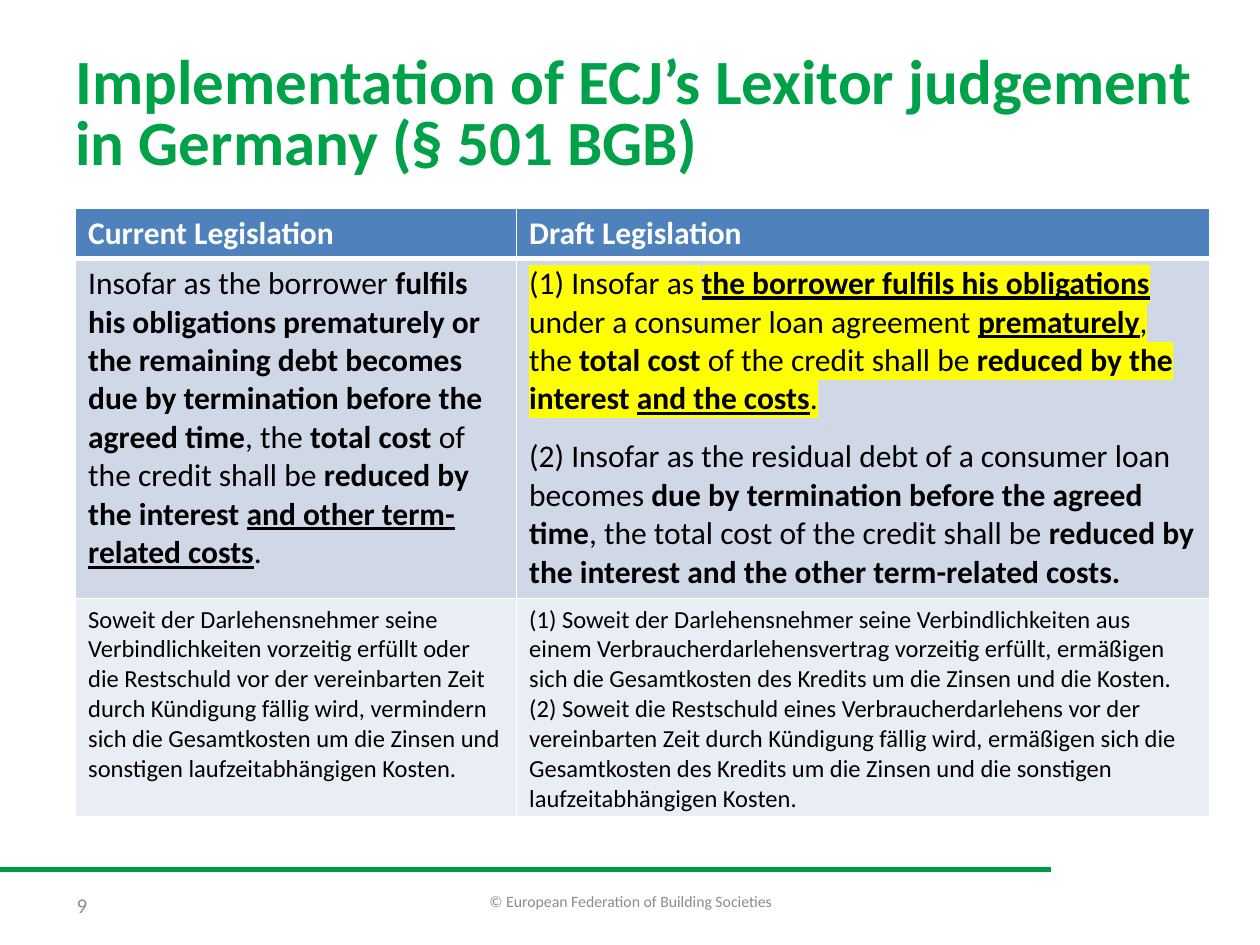
from dataclasses import dataclass
from typing import NamedTuple

from lxml import etree
from pptx import Presentation
from pptx import util as u
from pptx.dml.color import RGBColor
from pptx.enum import shapes, text
from pptx.oxml.ns import qn


@dataclass(frozen=True)
class Theme:
    font: str = "Calibri"
    title_color: str = "00A249"
    rule_color: str = "009A46"
    footer_color: str = "8C8C8C"
    ink: str = "000000"
    white: str = "FFFFFF"
    marker: str = "FFFF00"
    row_fills: tuple = ("4F81BD", "D0D8E8", "E9EDF4")
    title_size: float = 36
    law_size: float = 18
    german_size: float = 14
    number_size: float = 12
    copyright_size: float = 9


class Run(NamedTuple):
    words: str
    bold: bool = False
    underline: bool = False


class Para(NamedTuple):
    runs: tuple
    marked: bool = False
    gap: float = 0


class Style(NamedTuple):
    size: float
    color: str


class Box(NamedTuple):
    """Lengths as shares of the slide's width and height."""
    left: float
    top: float
    width: float
    height: float


THEME = Theme()
WIDTH, HEIGHT = u.Inches(10), u.Inches(7.5)

# Table grid: column shares of the width, row shares of the height
TABLE_LEFT, TABLE_TOP = 0.06, 0.22
COLUMNS = (0.35, 0.55)
ROWS = (0.05, 0.36, 0.23)

HEADINGS = [[Para((Run(name, True),))] for name in ("Current Legislation", "Draft Legislation")]

CURRENT_LAW = [Para((
    Run("Insofar as the borrower "),
    Run("fulfils his obligations prematurely or the remaining debt becomes "
        "due by termination before the agreed time", True),
    Run(", the "), Run("total cost ", True),
    Run("of the credit shall be "), Run("reduced by the interest ", True),
    Run("and other term-related costs", True, True), Run("."),
))]

DRAFT_LAW = [
    Para((
        Run("(1) Insofar as "),
        Run("the borrower fulfils his obligations ", True, True),
        Run("under a consumer loan agreement "),
        Run("prematurely", True, True), Run(", the "),
        Run("total cost ", True), Run("of the credit shall be "),
        Run("reduced by the interest ", True),
        Run("and the costs", True, True), Run("."),
    ), marked=True),
    Para((
        Run("(2) Insofar as the residual debt of a consumer loan becomes "),
        Run("due by termination before the agreed time", True),
        Run(", the total cost of the credit shall be"),
        Run(" reduced by the interest and the other term-related costs.", True),
    ), gap=11),
]

CURRENT_GERMAN = [Para((Run(
    "Soweit der Darlehensnehmer seine Verbindlichkeiten vorzeitig erfüllt oder die "
    "Restschuld vor der vereinbarten Zeit durch Kündigung fällig wird, vermindern sich "
    "die Gesamtkosten um die Zinsen und sonstigen laufzeitabhängigen Kosten."),))]

DRAFT_GERMAN = [
    Para((Run(
        "(1) Soweit der Darlehensnehmer seine Verbindlichkeiten aus einem "
        "Verbraucherdarlehensvertrag vorzeitig erfüllt, ermäßigen sich die "
        "Gesamtkosten des Kredits um die Zinsen und die Kosten."),)),
    Para((Run(
        "(2) Soweit die Restschuld eines Verbraucherdarlehens vor der vereinbarten Zeit "
        "durch Kündigung fällig wird, ermäßigen sich die Gesamtkosten des Kredits um die "
        "Zinsen und die sonstigen laufzeitabhängigen Kosten."),)),
]

CONTENT = (HEADINGS, (CURRENT_LAW, DRAFT_LAW), (CURRENT_GERMAN, DRAFT_GERMAN))
ROW_STYLES = (Style(THEME.law_size, THEME.white),
              Style(THEME.law_size, THEME.ink),
              Style(THEME.german_size, THEME.ink))


def across(share: float) -> int:
    return round(WIDTH * share)


def down(share: float) -> int:
    return round(HEIGHT * share)


def add_color(parent, tag: str, color: str):
    element = etree.SubElement(parent, qn(tag))
    etree.SubElement(element, qn("a:srgbClr"), val=color)
    return element


def write(frame, paras, style: Style, **layout) -> None:
    for index, para in enumerate(paras):
        line = frame.paragraphs[0] if index == 0 else frame.add_paragraph()
        if para.gap:
            line.space_before = u.Pt(para.gap)
        for name, value in layout.items():
            setattr(line, name, value)
        for part in para.runs:
            run = line.add_run()
            run.text = part.words
            run.font.color.rgb = RGBColor.from_string(style.color)
            if para.marked:
                add_color(run.font._element, "a:highlight", THEME.marker)
            formats = {"size": u.Pt(style.size), "bold": part.bold,
                       "underline": part.underline, "name": THEME.font}
            for name, value in formats.items():
                setattr(run.font, name, value)


def add_label(slide, box: Box, words: Run, style: Style, **layout) -> None:
    frame = slide.shapes.add_textbox(across(box.left), down(box.top),
                                     across(box.width), down(box.height)).text_frame
    frame.word_wrap = True
    frame.vertical_anchor = text.MSO_ANCHOR.MIDDLE
    write(frame, [Para((words,))], style, **layout)


def add_borders(cell, widths: dict) -> None:
    properties = cell._tc.get_or_add_tcPr()
    for index, (side, points) in enumerate(widths.items()):
        border = etree.Element(qn(f"a:ln{side}"), w=str(u.Pt(points)))
        add_color(border, "a:solidFill", THEME.white)
        properties.insert(index, border)


def add_law_table(slide) -> None:
    table = slide.shapes.add_table(
        len(ROWS), len(COLUMNS), across(TABLE_LEFT), down(TABLE_TOP),
        across(sum(COLUMNS)), down(sum(ROWS))).table
    for column, share in zip(table.columns, COLUMNS):
        column.width = across(share)
    for r, (row, share) in enumerate(zip(table.rows, ROWS)):
        row.height = down(share)
        for cell, paras in zip(row.cells, CONTENT[r]):
            cell.fill.solid()
            cell.fill.fore_color.rgb = RGBColor.from_string(THEME.row_fills[r])
            # The header is set off by a thicker line
            add_borders(cell, {"L": 1, "R": 1, "T": 3 if r == 1 else 1, "B": 3 if r == 0 else 1})
            write(cell.text_frame, paras, ROW_STYLES[r])


def add_rule(slide) -> None:
    rule = slide.shapes.add_connector(shapes.MSO_CONNECTOR.STRAIGHT,
                                      0, down(0.92), across(0.834), down(0.92))
    rule.line.color.rgb = RGBColor.from_string(THEME.rule_color)
    rule.line.width = u.Pt(3)
    etree.SubElement(rule._element.spPr, qn("a:effectLst"))


def main() -> None:
    deck = Presentation()
    deck.slide_width, deck.slide_height = WIDTH, HEIGHT
    slide = deck.slides.add_slide(deck.slide_layouts[6])

    # Footer
    add_rule(slide)
    add_label(slide, Box(0.342, 0.927, 0.317, 0.053),
              Run("© European Federation of Building Societies"),
              Style(THEME.copyright_size, THEME.footer_color), alignment=text.PP_ALIGN.CENTER)
    add_label(slide, Box(0.051, 0.931, 0.233, 0.053), Run("9"),
              Style(THEME.number_size, THEME.footer_color))

    # Comparison of the laws
    add_law_table(slide)

    # Title
    add_label(slide, Box(0.05, 0.04, 0.915, 0.167),
              Run("Implementation of ECJ’s Lexitor judgement in Germany (§ 501 BGB)", True),
              Style(THEME.title_size, THEME.title_color), line_spacing=0.8)

    deck.save("out.pptx")


if __name__ == "__main__":
    main()
